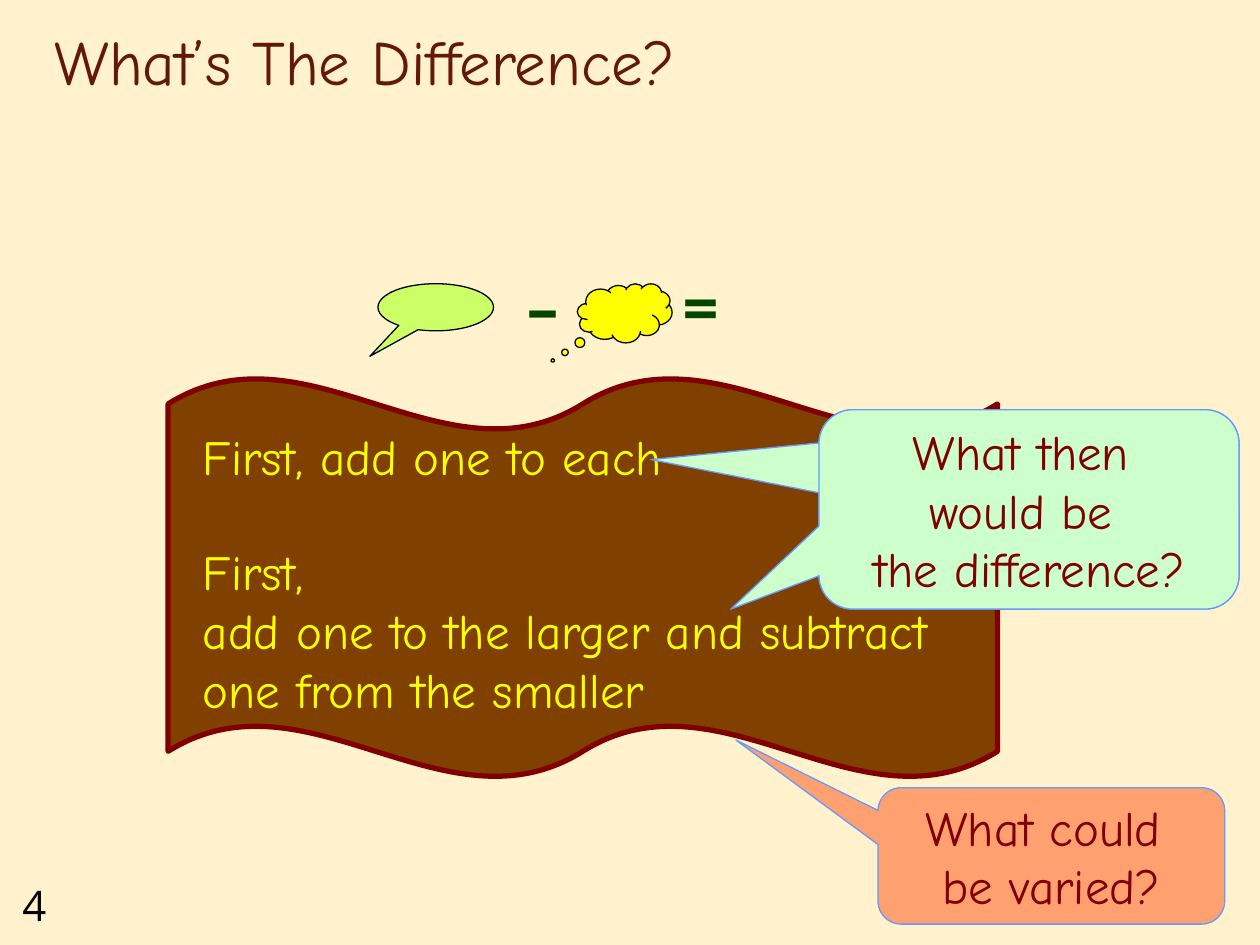
"""Build the "What's The Difference?" subtraction slide."""
import pptx
import pptx.dml.color
import pptx.enum.shapes
import pptx.enum.text
import pptx.util

SHAPE = pptx.enum.shapes.MSO_SHAPE
ALIGN = pptx.enum.text.PP_ALIGN
ANCHOR = pptx.enum.text.MSO_ANCHOR

COLORS = {
    "cream": "FFF2CC", "black": "000000", "title": "631908", "brown": "804000",
    "maroon": "800000", "lime": "CCFF66", "yellow": "FFFF00", "green": "004500",
    "mint": "CCFFCC", "blue": "6699FF", "salmon": "FFA070",
}
HAND, SANS = "Comic Neue", "Open Sans"

TITLE = {"name": HAND, "size": 36, "color": "title"}
NUMBER = {"name": SANS, "size": 24, "color": "black"}
SIGN = {"name": SANS, "size": 36, "color": "green", "bold": True}
TASK = {"name": HAND, "size": 28, "color": "yellow"}
QUESTION = {"name": HAND, "size": 28, "color": "maroon"}

DIFFERENCE_BOX = (16.51, 8.26, 8.47, 4.02)

SHAPES = [
    (SHAPE.DOUBLE_WAVE, (3.39, 7.62, 16.72, 8.05), (0.065, 0), "brown", "maroon", 3, ""),
    (SHAPE.OVAL_CALLOUT, (7.62, 5.72, 2.33, 0.95), (-0.57, 1.04), "lime", "black", 0.75, ""),
    (SHAPE.CLOUD_CALLOUT, (11.64, 5.72, 1.91, 1.19), (-0.76, 0.8), "yellow", "black", 0.75, ""),
]
TEXTS = [
    ("4", (0.2, 17.6, 1.9, 1.27), NUMBER, ANCHOR.TOP),
    ("What’s The Difference?", (0.85, 0.42, 21.59, 1.69), TITLE, ANCHOR.BOTTOM),
    ("–", (10.37, 5.29, 1.48, 1.77), SIGN, ANCHOR.TOP),
    ("=", (13.51, 5.29, 1.52, 1.77), SIGN, ANCHOR.TOP),
    ("First, add one to each", (3.84, 8.47, 11.64, 1.44), TASK, ANCHOR.TOP),
    ("First, \vadd one to the larger and subtract one from the smaller",
     (3.84, 10.8, 15.88, 3.81), TASK, ANCHOR.TOP),
]
CALLOUTS = [
    (SHAPE.ROUNDED_RECTANGULAR_CALLOUT, DIFFERENCE_BOX, (-0.9, -0.25, 0.17),
     "mint", "blue", 0.75, ""),
    (SHAPE.ROUNDED_RECTANGULAR_CALLOUT, DIFFERENCE_BOX, (-0.71, 0.5, 0.17),
     "mint", "blue", 0.75, "What then \vwould be \vthe difference?"),
    (SHAPE.ROUNDED_RECTANGULAR_CALLOUT, (17.7, 15.88, 6.99, 2.75), (-0.91, -0.85, 0.17),
     "salmon", "blue", 0.75, "What could \vbe varied?"),
]


def color(name):
    return pptx.dml.color.RGBColor.from_string(COLORS[name])


def lengths(box):
    return [pptx.util.Cm(value) for value in box]


def write(frame, text, style, alignment, anchor, wrap):
    frame.text = text
    frame.word_wrap = wrap
    frame.vertical_anchor = anchor
    paragraph = frame.paragraphs[0]
    paragraph.alignment = alignment
    formats = {"bold": False, **style, "size": pptx.util.Pt(style["size"])}
    text_color = color(formats.pop("color"))
    for run in paragraph.runs:
        for attribute, value in formats.items():
            setattr(run.font, attribute, value)
        run.font.color.rgb = text_color


def add_text(slide, text, box, style, anchor):
    shape = slide.shapes.add_textbox(*lengths(box))
    write(shape.text_frame, text, style, ALIGN.LEFT, anchor, True)


def add_shape(slide, kind, box, adjustments, fill, line, width, text):
    shape = slide.shapes.add_shape(kind, *lengths(box))
    shape.shadow.inherit = False
    for index, value in enumerate(adjustments):
        shape.adjustments[index] = value
    shape.fill.solid()
    shape.fill.fore_color.rgb = color(fill)
    shape.line.color.rgb = color(line)
    shape.line.width = pptx.util.Pt(width)
    if text:
        write(shape.text_frame, text, QUESTION, ALIGN.CENTER, ANCHOR.MIDDLE, False)


def main():
    presentation = pptx.Presentation()
    presentation.slide_width = pptx.util.Cm(25.4)
    presentation.slide_height = pptx.util.Cm(19.05)
    slide = presentation.slides.add_slide(presentation.slide_layouts[6])
    slide.background.fill.solid()
    slide.background.fill.fore_color.rgb = color("cream")
    for item in SHAPES:
        add_shape(slide, *item)
    for item in TEXTS:
        add_text(slide, *item)
    for item in CALLOUTS:
        add_shape(slide, *item)
    presentation.save("out.pptx")


if __name__ == "__main__":
    main()
